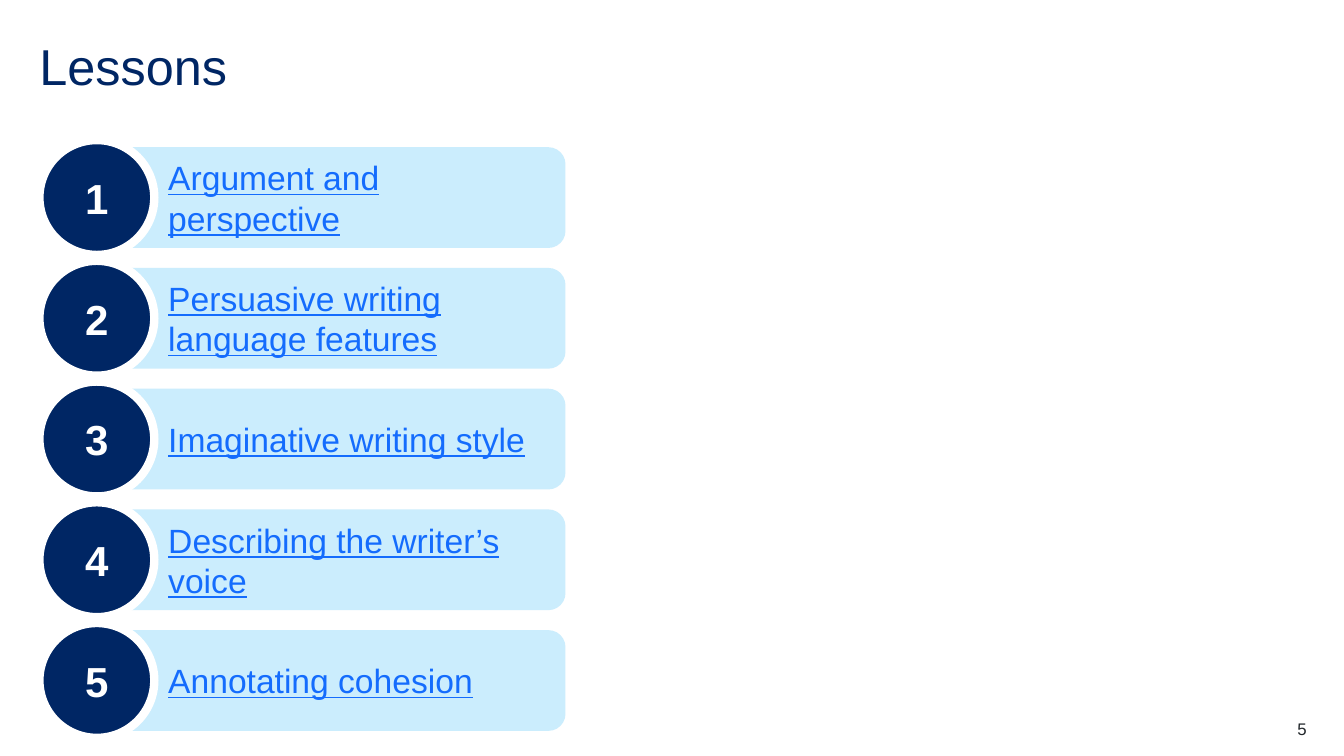
"""Build the Lessons slide: five numbered bars under a title."""
from dataclasses import dataclass

from pptx import Presentation
from pptx import util as u
from pptx.dml.color import RGBColor
from pptx.enum import shapes, text

WIDE, HIGH = u.Inches(13.33), u.Inches(7.5)
NAVY = RGBColor(0x00, 0x26, 0x64)
SKY = RGBColor(0xCB, 0xED, 0xFD)
BLUE = RGBColor(0x14, 0x6C, 0xFD)
INK = RGBColor(0x22, 0x27, 0x2B)
WHITE = RGBColor(0xFF, 0xFF, 0xFF)
MID = text.MSO_ANCHOR.MIDDLE
ALIGN = text.PP_ALIGN
BARE = dict(margin_left=0, margin_top=0, margin_right=0, margin_bottom=0)
PITCH = 15.97
TOPICS = (
    "Argument and perspective",
    "Persuasive writing language features",
    "Imaginative writing style",
    "Describing the writer’s voice",
    "Annotating cohesion",
)


@dataclass(frozen=True)
class Box:
    """A place in percent of the slide's width and height."""
    left: float
    top: float
    width: float
    height: float

    def lower(self, rows: int) -> "Box":
        """Return this place moved down by whole lesson rows."""
        return Box(self.left, self.top + rows * PITCH, self.width, self.height)

    def spot(self) -> tuple[int, int, int, int]:
        """Return left, top, width and height in slide units."""
        return (int(WIDE * self.left / 100), int(HIGH * self.top / 100),
                int(WIDE * self.width / 100), int(HIGH * self.height / 100))


TITLE = Box(2.93, 5.2, 94.2, 8)
BAR = Box(8.48, 19.47, 33.6, 13.33)
DISC = Box(2.93, 18.53, 8.55, 15.2)
PAGE = Box(91.3, 95.07, 5.92, 2.67)


def apply(item, **values) -> None:
    """Set each named value on an item."""
    for name, value in values.items():
        setattr(item, name, value)


def write(shape, words: str, size: int, color: RGBColor, align=ALIGN.LEFT,
          frame: dict | None = None, **style) -> None:
    """Put one formatted line of text in a shape."""
    body = shape.text_frame
    body.text = words
    apply(body, word_wrap=True, vertical_anchor=MID, **(frame or {}))
    line = body.paragraphs[0]
    line.alignment = align
    font = line.runs[0].font
    apply(font, name="Arial", size=u.Pt(size), **style)
    font.color.rgb = color


def draw(group, kind, box: Box, fill: RGBColor):
    """Add a flat filled shape to a group."""
    shape = group.shapes.add_shape(kind, *box.spot())
    shape.shadow.inherit = False
    shape.fill.solid()
    shape.fill.fore_color.rgb = fill
    shape.line.fill.background()
    return shape


def lesson(slide, row: int, topic: str) -> None:
    """Draw one bar with its numbered disc."""
    group = slide.shapes.add_group_shape()
    bar = draw(group, shapes.MSO_SHAPE.ROUNDED_RECTANGLE, BAR.lower(row), SKY)
    bar.adjustments[0] = 0.17
    write(bar, topic, 24, BLUE, underline=True)
    bar.text_frame.paragraphs[0]._p.get_or_add_pPr().set(
        "marL", str(int(WIDE * 0.0293)))
    disc = draw(group, shapes.MSO_SHAPE.OVAL, DISC.lower(row), NAVY)
    disc.line.color.rgb = WHITE
    disc.line.width = u.Pt(6)
    write(disc, str(row + 1), 30, WHITE, ALIGN.CENTER, bold=True)


def main() -> None:
    """Build and save the slide."""
    deck = Presentation()
    apply(deck, slide_width=WIDE, slide_height=HIGH)
    slide = deck.slides.add_slide(deck.slide_layouts[5])
    title = slide.shapes.title
    apply(title, **dict(zip(("left", "top", "width", "height"), TITLE.spot())))
    write(title, "Lessons", 36, NAVY,
          frame=dict(BARE, auto_size=text.MSO_AUTO_SIZE.NONE))
    title.text_frame.paragraphs[0].line_spacing = 0.9
    for row, topic in enumerate(TOPICS):
        lesson(slide, row, topic)
    page = slide.shapes.add_textbox(*PAGE.spot())
    write(page, "5", 12, INK, ALIGN.RIGHT, BARE)
    deck.save("out.pptx")


if __name__ == "__main__":
    main()
